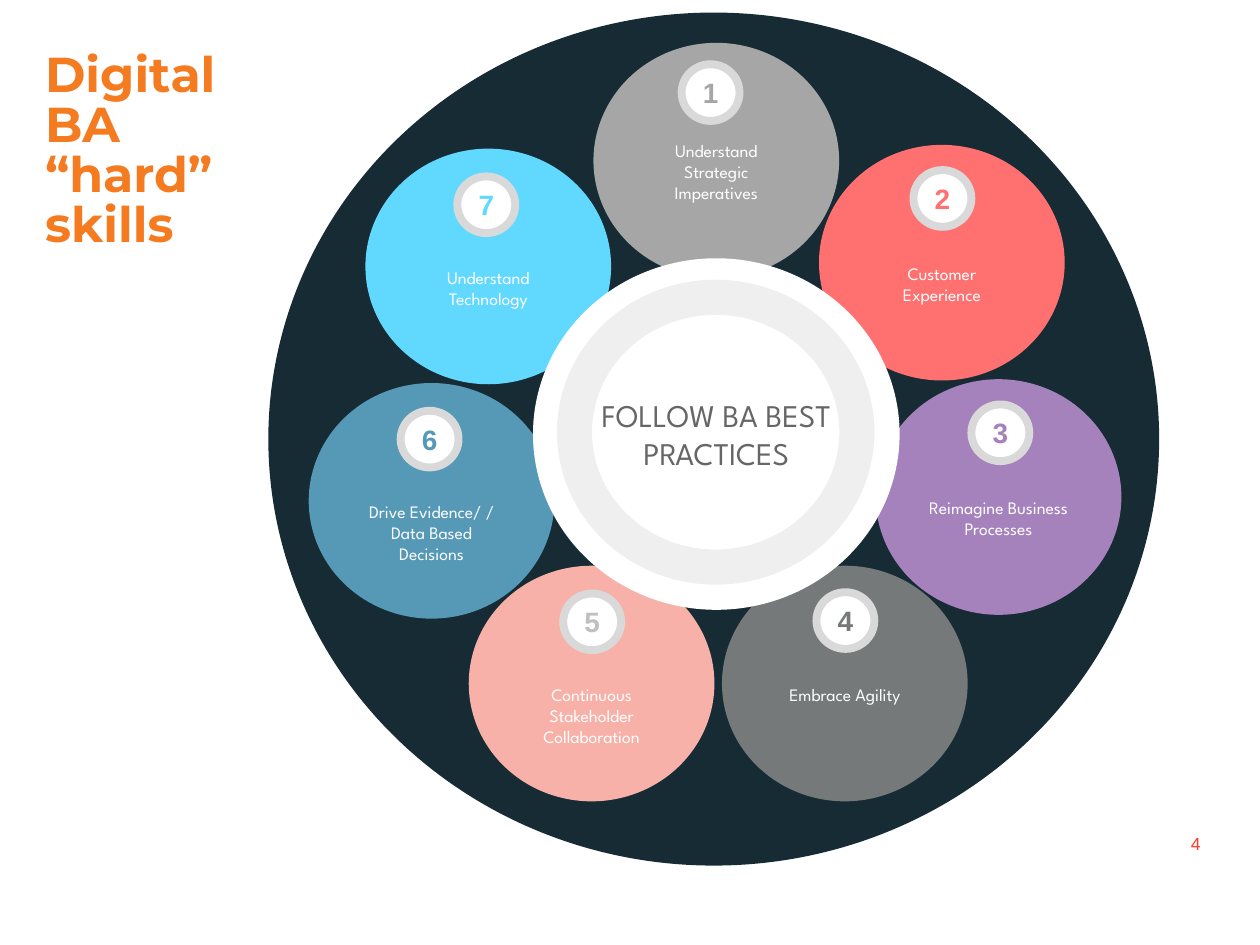
from dataclasses import dataclass
from typing import Any

from pptx import Presentation
from pptx.dml.color import RGBColor
from pptx.enum.shapes import MSO_SHAPE
from pptx.enum.text import MSO_ANCHOR, PP_ALIGN
from pptx.util import Inches, Pt

COLORS = {
    "title": "F47B20", "page": "FF3B26", "wheel": "162B34", "white": "FFFFFF",
    "hub": "666666", "ring": "EFEFEF", "rim": "D9D9D9", "silver": "BFBFBF",
    "gray": "A6A6A6", "red": "FF7171", "purple": "A682BC", "slate": "757979",
    "pink": "F7B1A8", "steel": "5599B7", "sky": "61D9FF",
}
COLUMNS, ROWS = 100, 75
PETAL_SIZE = (19.5, 18.7)
BADGE_SIZE = (4.6, 4.5)
LINE_HEIGHT = 0.17

PETALS = [
    ("Understand Strategic Imperatives", "gray", "gray", (47.1, 3.4), (54.1, 5.1), 1),
    ("Customer\nExperience", "red", "red", (65, 11.5), (72.5, 13.5), 2),
    ("Reimagine Business Processes", "purple", "purple", (69.5, 30.1), (77.1, 32.1), 2),
    ("Embrace Agility", "slate", "slate", (57.3, 44.9), (64.8, 47), 1),
    ("Continuous Stakeholder Collaboration", "pink", "silver", (37.2, 44.9), (44.7, 47.1), 3),
    ("Drive Evidence/ / Data Based Decisions", "steel", "steel", (24.5, 30.4), (31.8, 32.6), 3),
    ("Understand Technology", "sky", "sky", (29, 11.8), (36.3, 14), 2),
]


def rgb(name):
    return RGBColor.from_string(COLORS[name])


def write(sp, text, *, size, font, color, bold=False, align=PP_ALIGN.CENTER,
          anchor=MSO_ANCHOR.MIDDLE, inset=0.1, drop=0, spacing=None):
    tf = sp.text_frame
    tf.word_wrap = True
    tf.vertical_anchor = anchor
    tf.margin_left = tf.margin_right = tf.margin_bottom = Inches(inset)
    tf.margin_top = Inches(inset + drop)
    p = tf.paragraphs[0]
    p.alignment = align
    p.line_spacing = spacing
    for i, line in enumerate(text.split("\n")):
        if i:
            p.add_line_break()
        r = p.add_run()
        r.text = line
        r.font.size = Pt(size)
        r.font.name = font
        r.font.bold = bold
        r.font.color.rgb = rgb(color)


@dataclass
class Deck:
    prs: Any
    slide: Any = None
    group: Any = None
    body_font: str = "League Spartan"
    title_font: str = "Montserrat"
    number_font: str = "Arial"

    def new_slide(self):
        self.slide = self.prs.slides.add_slide(self.prs.slide_layouts[6])

    def new_group(self):
        self.group = self.slide.shapes.add_group_shape()

    def box(self, at, extent):
        w, h = self.prs.slide_width / COLUMNS, self.prs.slide_height / ROWS
        return [round(n * unit) for n, unit in zip((*at, *extent), (w, h, w, h))]

    def label(self, text, at, extent, **fmt):
        sp = self.slide.shapes.add_textbox(*self.box(at, extent))
        write(sp, text, **fmt)

    def disc(self, at, extent, fill, shape=MSO_SHAPE.OVAL, rim=None):
        sp = self.group.shapes.add_shape(shape, *self.box(at, extent))
        sp.shadow.inherit = False
        sp.fill.solid()
        sp.fill.fore_color.rgb = rgb(fill)
        if rim:
            sp.line.color.rgb = rgb(rim)
            sp.line.width = Pt(4.5)
        else:
            sp.line.fill.background()
        return sp

    def petal(self, text, fill, at, lines_down):
        sp = self.disc(at, PETAL_SIZE, fill)
        write(sp, text, size=10, font=self.body_font, color="white",
              drop=lines_down * LINE_HEIGHT)

    def badge(self, number, color, at):
        sp = self.disc(at, BADGE_SIZE, "white", rim="rim")
        write(sp, str(number), size=16, font=self.number_font, color=color,
              bold=True, inset=0.05)

    def hub(self, text):
        sp = self.disc((42.3, 20.5), (29.1, 27.9), "white")
        write(sp, text, size=18, font=self.body_font, color="hub")
        ring = self.disc((44.2, 22.2), (25.2, 24.2), "ring", MSO_SHAPE.DONUT)
        ring.adjustments[0] = 0.115


def main():
    prs = Presentation()
    prs.slide_width, prs.slide_height = Inches(10), Inches(7.5)
    deck = Deck(prs)
    deck.new_slide()
    deck.label("4", (92.5, 65.8), (4.8, 2.3), size=10, font=deck.number_font,
               color="page", inset=0)
    deck.label("Digital\nBA\n“hard”\nskills", (2.6, 3.2), (22.4, 59.2), size=28,
               font=deck.title_font, color="title", bold=True,
               align=PP_ALIGN.LEFT, anchor=MSO_ANCHOR.TOP, spacing=0.85)
    deck.new_group()
    deck.disc((21.3, 1), (70.7, 67.7), "wheel")
    for number, (text, fill, ink, at, badge_at, lines_down) in enumerate(PETALS, 1):
        deck.petal(text, fill, at, lines_down)
        deck.badge(number, ink, badge_at)
    deck.hub("FOLLOW BA BEST PRACTICES")
    prs.save("out.pptx")


if __name__ == "__main__":
    main()
